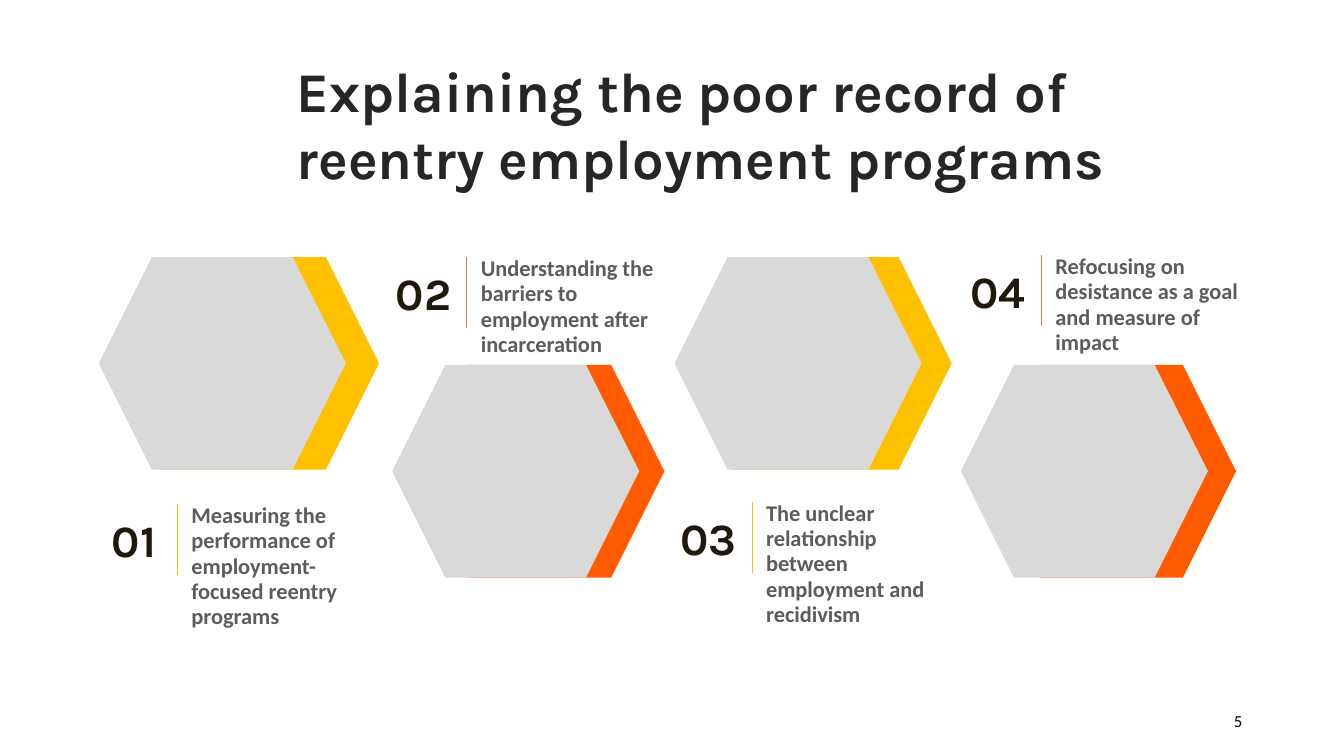
from dataclasses import dataclass

from lxml import etree
from pptx import Presentation
from pptx.dml.color import RGBColor
from pptx.enum.shapes import MSO_CONNECTOR, MSO_SHAPE
from pptx.enum.text import MSO_ANCHOR, MSO_AUTO_SIZE, PP_ALIGN
from pptx.oxml.ns import qn
from pptx.shapes.base import BaseShape
from pptx.slide import Slide
from pptx.util import Inches, Pt

HEXAGON = MSO_SHAPE.HEXAGON
STRAIGHT = MSO_CONNECTOR.STRAIGHT
TOP, MIDDLE = MSO_ANCHOR.TOP, MSO_ANCHOR.MIDDLE
LEFT, CENTER, RIGHT = PP_ALIGN.LEFT, PP_ALIGN.CENTER, PP_ALIGN.RIGHT
NO_AUTOSIZE = MSO_AUTO_SIZE.NONE
TITLE_ONLY = 5


@dataclass(frozen=True)
class TextStyle:
    font: str
    size: int
    color: str
    bold: bool = True
    align: PP_ALIGN = LEFT
    anchor: MSO_ANCHOR = TOP
    line_points: int | None = None


@dataclass(frozen=True)
class Theme:
    title: TextStyle = TextStyle("Karla", 40, "262626")
    caption: TextStyle = TextStyle("Calibri", 16, "5D5C5C", line_points=18)
    number: TextStyle = TextStyle("Karla", 32, "20190B", align=CENTER, anchor=MIDDLE)
    page: TextStyle = TextStyle("Calibri", 12, "000000", False, RIGHT, MIDDLE)
    front: str = "D9D9D9"


@dataclass(frozen=True)
class Row:
    hexagon_top: float
    back_width: float
    back_color: str
    rule_color: str
    caption_height: float


@dataclass(frozen=True)
class Topic:
    number: str
    caption: str
    row: Row
    back_left: float
    front_left: float
    caption_left: float
    caption_top: float


THEME = Theme()
HEXAGON_HEIGHT = 2.11
FRONT_WIDTH = 2.45
UPPER = Row(2.55, 2.7, "FFC000", "FFC000", 1.36)
LOWER = Row(3.62, 2.47, "FF5C01", "DD8047", 1.11)
TOPICS = [
    Topic("01", "Measuring the performance of employment-focused reentry programs",
          UPPER, 1.06, 0.98, 1.8, 4.94),
    Topic("02", "Understanding the barriers to employment after incarceration",
          LOWER, 4.12, 3.89, 4.67, 2.49),
    Topic("03", "The unclear relationship between employment and recidivism",
          UPPER, 6.74, 6.69, 7.5, 4.92),
    Topic("04", "Refocusing on desistance as a goal and measure of impact",
          LOWER, 9.79, 9.53, 10.37, 2.47),
]


def write(holder: BaseShape, text: str, style: TextStyle) -> None:
    frame = holder.text_frame
    frame.word_wrap = True
    frame.auto_size = NO_AUTOSIZE
    frame.vertical_anchor = style.anchor
    frame.text = text
    paragraph = frame.paragraphs[0]
    paragraph.alignment = style.align
    if style.line_points:
        paragraph.line_spacing = Pt(style.line_points)
    for run in paragraph.runs:
        run.font.name = style.font
        run.font.size = Pt(style.size)
        run.font.bold = style.bold
        run.font.color.rgb = RGBColor.from_string(style.color)


def add_text(slide: Slide, left: float, top: float, width: float, height: float,
             text: str, style: TextStyle) -> None:
    holder = slide.shapes.add_textbox(Inches(left), Inches(top), Inches(width), Inches(height))
    write(holder, text, style)


def add_hexagon(slide: Slide, left: float, top: float, width: float, color: str) -> None:
    hexagon = slide.shapes.add_shape(
        HEXAGON, Inches(left), Inches(top), Inches(width), Inches(HEXAGON_HEIGHT))
    hexagon.shadow.inherit = False
    hexagon.fill.solid()
    hexagon.fill.fore_color.rgb = RGBColor.from_string(color)
    hexagon.line.fill.background()


def add_rule(slide: Slide, x: float, top: float, length: float, color: str) -> None:
    rule = slide.shapes.add_connector(
        STRAIGHT, Inches(x), Inches(top), Inches(x), Inches(top + length))
    rule.line.color.rgb = RGBColor.from_string(color)
    rule.line.width = Pt(0.5)
    etree.SubElement(rule._element.spPr, qn("a:effectLst"))


def add_topic(slide: Slide, topic: Topic) -> None:
    row, left, top = topic.row, topic.caption_left, topic.caption_top
    add_hexagon(slide, topic.back_left, row.hexagon_top, row.back_width, row.back_color)
    add_hexagon(slide, topic.front_left, row.hexagon_top, FRONT_WIDTH, THEME.front)
    add_text(slide, left, top, 2.01, row.caption_height, topic.caption, THEME.caption)
    add_text(slide, left - 0.85, top + 0.09, 0.76, 0.64, topic.number, THEME.number)
    add_rule(slide, left - 0.04, top + 0.06, 0.7, row.rule_color)


def main() -> None:
    deck = Presentation()
    deck.slide_width, deck.slide_height = Inches(13.33), Inches(7.5)
    slide = deck.slides.add_slide(deck.slide_layouts[TITLE_ONLY])
    title = slide.shapes.title
    title.left, title.top = Inches(2.84), Inches(0.51)
    title.width, title.height = Inches(9.66), Inches(1.45)
    write(title, "Explaining the poor record of reentry employment programs", THEME.title)
    add_text(slide, 9.42, 6.95, 3, 0.4, "5", THEME.page)
    for topic in TOPICS:
        add_topic(slide, topic)
    deck.save("out.pptx")


if __name__ == "__main__":
    main()
